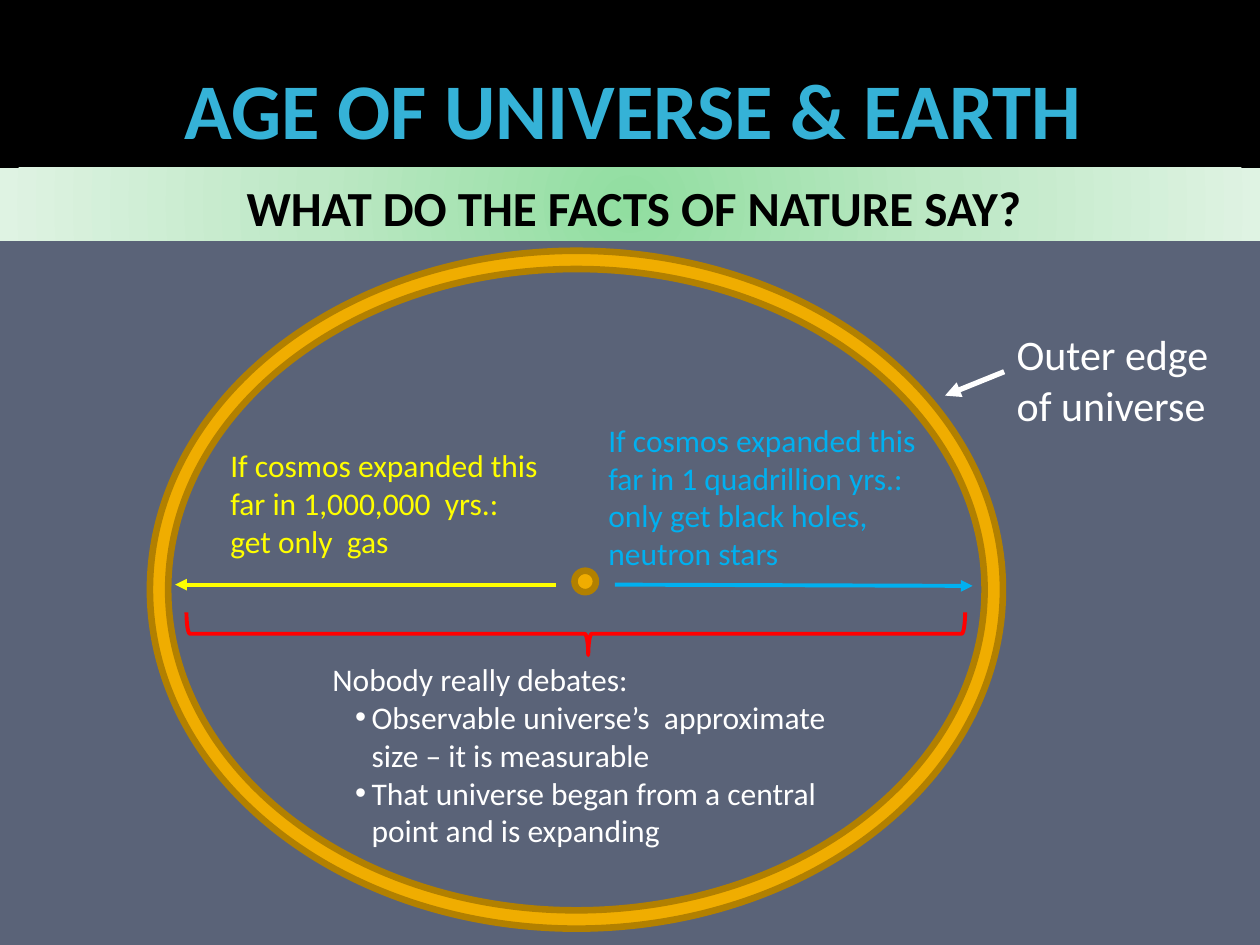
"""Build a slide on the age of the universe and the earth."""
from lxml.etree import SubElement
from pptx import Presentation
from pptx.dml.color import RGBColor
from pptx.enum.shapes import MSO_CONNECTOR, MSO_SHAPE
from pptx.enum.text import MSO_ANCHOR, PP_ALIGN
from pptx.oxml.ns import qn
from pptx.util import Inches, Pt

SLATE = RGBColor(0x5A, 0x63, 0x78)
BLACK = RGBColor(0, 0, 0)
WHITE = RGBColor(255, 255, 255)
TEAL = RGBColor(0x35, 0xB2, 0xD7)
GOLD = RGBColor(0xF0, 0xAD, 0)
BRONZE = RGBColor(0xB2, 0x80, 0)
BLUE = RGBColor(0, 0xB0, 0xF0)
YELLOW = RGBColor(255, 255, 0)
RED = RGBColor(255, 0, 0)
GREENS = [(0, "91DEA0"), (50, "BDE8C5"), (100, "DFF3E3")]

WIDE, HIGH = 10, 7.5
TITLE = "AGE OF UNIVERSE & EARTH"
ASK = "WHAT DO THE FACTS OF NATURE SAY?"
NOTES = [
    ((1.73, 3.49, 2.85, 1.01), YELLOW, 18, True, [
        ("If cosmos expanded this far in 1,000,000  yrs.:", ""),
        ("get only  gas", "")]),
    ((4.73, 3.29, 2.85, 1.31), BLUE, 18, True, [
        ("If cosmos expanded this far in 1 quadrillion yrs.: "
         "only get black holes,", ""),
        ("neutron stars", "")]),
    ((2.54, 5.19, 4.22, 1.62), WHITE, 18, True, [
        ("Nobody really debates:", ""),
        ("Observable universe’s  approximate size – it is measurable", "bullet"),
        ("That universe began from a central", "bullet"),
        ("point and is expanding", "indent")]),
    ((7.97, 2.56, 1.85, 0.91), WHITE, 24, False, [
        ("Outer edge", ""), ("of universe", "")]),
]
ARROWS = [
    ((4.88, 4.64), (7.72, 4.65), BLUE, 2.25),
    ((4.41, 4.64), (1.39, 4.64), YELLOW, 2.25),
    ((7.97, 2.95), (7.5, 3.14), WHITE, 3),
]


def add_shape(slide, kind, box, fill=None, line=None, width=0, adjust=()):
    shape = slide.shapes.add_shape(kind, *map(Inches, box))
    shape.shadow.inherit = False
    for paint, color in ((shape.fill, fill), (shape.line.fill, line)):
        if color is None:
            paint.background()
        else:
            paint.solid()
            paint.fore_color.rgb = color
    if line is not None:
        shape.line.width = Pt(width)
    for i, value in enumerate(adjust):
        shape.adjustments[i] = value
    return shape


def write(par, text, size, color, bold=False):
    run = par.add_run()
    run.text = text
    run.font.name = "Calibri"
    run.font.size = Pt(size)
    run.font.bold = bold
    run.font.color.rgb = color


def add_head(shape, text, size, color, pads):
    frame = shape.text_frame
    frame.word_wrap = True
    frame.vertical_anchor = MSO_ANCHOR.MIDDLE
    (frame.margin_left, frame.margin_top,
     frame.margin_right, frame.margin_bottom) = map(Inches, pads)
    par = frame.paragraphs[0]
    par.alignment = PP_ALIGN.CENTER
    write(par, text, size, color, True)


def add_glow(shape):
    shape.fill.gradient()
    grad = shape.fill._xPr.find(qn("a:gradFill"))
    for child in list(grad):
        grad.remove(child)
    stops = SubElement(grad, qn("a:gsLst"))
    for share, color in GREENS:
        stop = SubElement(stops, qn("a:gs"), pos=str(share * 1000))
        SubElement(stop, qn("a:srgbClr"), val=color)
    route = SubElement(grad, qn("a:path"))
    route.set("path", "circle")
    SubElement(route, qn("a:fillToRect"),
               {side: "50000" for side in "ltrb"})


def add_note(slide, box, color, size, wrap, lines):
    frame = slide.shapes.add_textbox(*map(Inches, box)).text_frame
    frame.word_wrap = wrap
    for i, (text, style) in enumerate(lines):
        par = frame.add_paragraph() if i else frame.paragraphs[0]
        write(par, text, size, color)
        if style:
            props = par._p.get_or_add_pPr()
            props.set("marL", str(Inches(0.31)))
        if style == "bullet":
            props.set("indent", str(Inches(-0.13)))
            SubElement(props, qn("a:buFont"), typeface="Arial")
            SubElement(props, qn("a:buChar"), char="•")


def add_arrow(slide, start, end, color, width):
    arrow = slide.shapes.add_connector(
        MSO_CONNECTOR.STRAIGHT, *map(Inches, start + end))
    arrow.line.color.rgb = color
    arrow.line.width = Pt(width)
    SubElement(arrow.line._get_or_add_ln(), qn("a:tailEnd"), type="triangle")
    SubElement(arrow._element.spPr, qn("a:effectLst"))


def main():
    deck = Presentation()
    deck.slide_width, deck.slide_height = Inches(WIDE), Inches(HIGH)
    slide = deck.slides.add_slide(deck.slide_layouts[6])
    slide.background.fill.solid()
    slide.background.fill.fore_color.rgb = SLATE

    add_shape(slide, MSO_SHAPE.RECTANGLE, (0, 0, WIDE, 1.57), BLACK)
    title = slide.shapes.add_textbox(*map(Inches, (0.5, 0.17, WIDE - 1, 1.37)))
    add_head(title, TITLE, 45, TEAL, (0.1, 0.05, 0.05, 0.05))
    band = add_shape(slide, MSO_SHAPE.RECTANGLE, (0, 1.33, WIDE, 0.58))
    add_glow(band)
    add_head(band, ASK, 28, BLACK, (0.16, 0.1, 0.1, 0.05))

    add_shape(slide, MSO_SHAPE.DONUT, (1.19, 1.99, 6.77, 5.38),
              GOLD, BRONZE, 3.78, [0.027])
    add_shape(slide, MSO_SHAPE.OVAL, (4.56, 4.53, 0.17, 0.17),
              GOLD, BRONZE, 3.78)
    brace = add_shape(slide, MSO_SHAPE.LEFT_BRACE, (4.4, 1.94, 0.34, 6.18),
                      None, RED, 2.25, [0.083, 0.516])
    brace.rotation = 270
    for arrow in ARROWS:
        add_arrow(slide, *arrow)
    for note in NOTES:
        add_note(slide, *note)
    deck.save("out.pptx")


if __name__ == "__main__":
    main()
